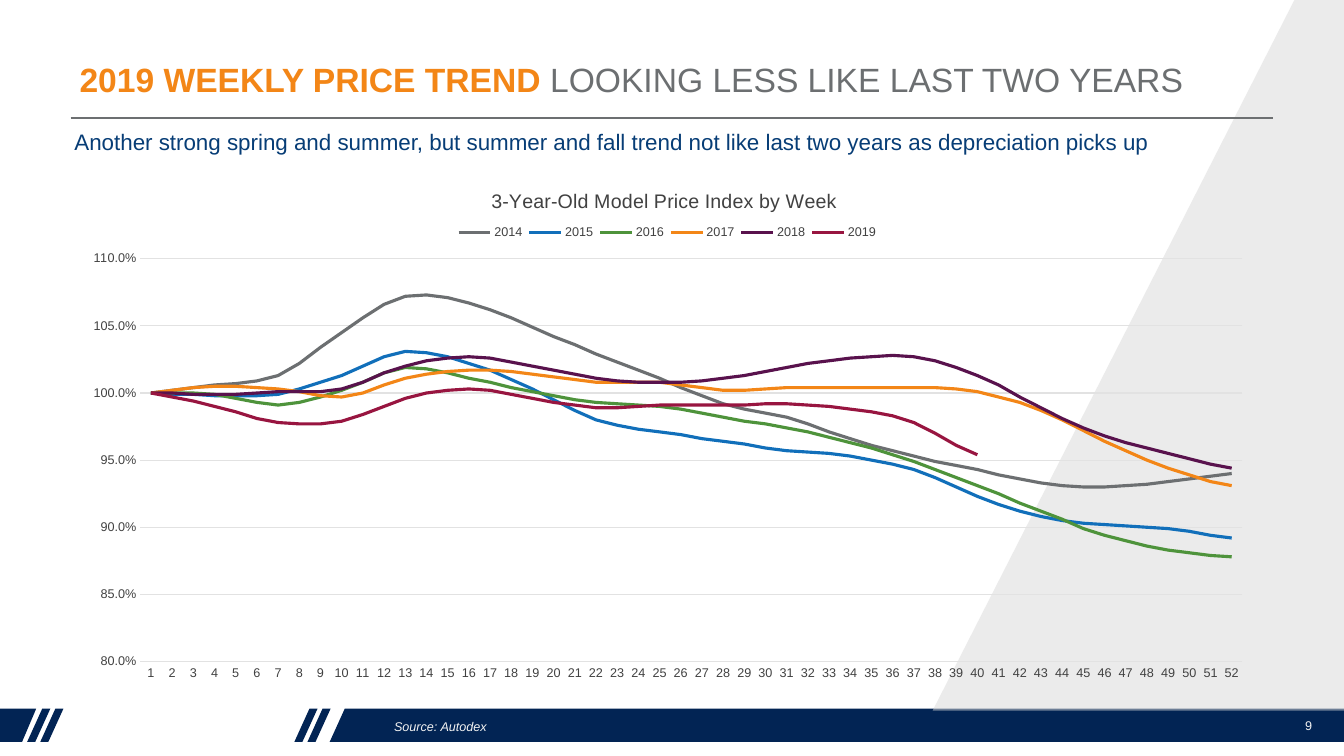
from lxml import etree
from pptx import Presentation
from pptx import util as u
from pptx.chart.data import CategoryChartData
from pptx.dml.color import RGBColor
from pptx.enum import chart as charts, shapes, text
from pptx.oxml.ns import qn

NAVY, ORANGE, GREY = "022454", "F38617", "6C6F71"
INK, GRID, PALE = "414141", "E2E2E2", "F2F2F2"
FOOTER_TOP, FOOTER_BOTTOM = 7.03, 7.36
SLANT = 0.15
WEEKS, STEP = 52, 3

# Index at every third week, in tenths of a percent
YEARS = {
    "2014": (GREY, [1000, 1006, 1013, 1045, 1072, 1067, 1049, 1029, 1011,
                    992, 982, 966, 953, 943, 933, 930, 934, 940]),
    "2015": ("116FBA", [1000, 998, 999, 1013, 1031, 1022, 1003, 980, 971,
                        964, 957, 953, 943, 923, 908, 902, 899, 892]),
    "2016": ("4E933B", [1000, 999, 991, 1002, 1019, 1011, 1001, 993, 990,
                        982, 974, 963, 949, 931, 912, 894, 883, 878]),
    "2017": (ORANGE, [1000, 1005, 1003, 997, 1011, 1017, 1014, 1008, 1008,
                      1002, 1004, 1004, 1004, 1001, 987, 964, 944, 931]),
    "2018": ("59124D", [1000, 999, 1001, 1003, 1020, 1027, 1020, 1011, 1008,
                        1011, 1019, 1026, 1027, 1013, 989, 968, 955, 944]),
    "2019": ("981540", [1000, 990, 978, 979, 996, 1003, 996, 989, 991,
                        991, 992, 988, 978, 954]),
}


def rgb(value):
    return RGBColor.from_string(value)


def weekly(knots):
    """Fill in the weeks between the knots with a Catmull-Rom curve."""
    values = []
    padded = [knots[0], *knots, knots[-1]]
    for before, start, end, after in zip(padded, padded[1:], padded[2:], padded[3:]):
        for week in range(STEP):
            t = week / STEP
            curve = start + t / 2 * (
                end - before
                + t * (2 * before - 5 * start + 4 * end - after)
                + t * t * (3 * (start - end) + after - before))
            values.append(round(curve) / 1000)
    values.append(knots[-1] / 1000)
    return values + [None] * (WEEKS - len(values))


class SlideBuilder:
    def __init__(self, slide, font="Arial"):
        self.slide, self.font = slide, font

    def style_font(self, font, color, size, **formats):
        for name, value in {"name": self.font, "size": u.Pt(size), **formats}.items():
            setattr(font, name, value)
        font.color.rgb = rgb(color)

    def style_line(self, line, color, width):
        line.color.rgb = rgb(color)
        line.width = u.Pt(width)

    def polygon(self, points, color, opacity=100):
        corners = [(u.Inches(x), u.Inches(y)) for x, y in points]
        builder = self.slide.shapes.build_freeform(*corners[0], scale=1.0)
        builder.add_line_segments(corners[1:], close=True)
        shape = builder.convert_to_shape()
        shape.shadow.inherit = False
        shape.fill.solid()
        shape.fill.fore_color.rgb = rgb(color)
        shape.line.fill.background()
        if opacity < 100:
            tint = shape.element.xpath("./p:spPr/a:solidFill/a:srgbClr")[0]
            etree.SubElement(tint, qn("a:alpha"), val=str(opacity * 1000))

    def rule(self, left, right, y, color, width):
        line = self.slide.shapes.add_connector(
            shapes.MSO_CONNECTOR.STRAIGHT,
            u.Inches(left), u.Inches(y), u.Inches(right), u.Inches(y))
        self.style_line(line.line, color, width)
        etree.SubElement(line.element.spPr, qn("a:effectLst"))

    def text(self, area, spans, size, anchor=text.MSO_ANCHOR.MIDDLE,
             align=text.PP_ALIGN.LEFT):
        """Add one paragraph made of (wording, colour, formats) spans."""
        box = self.slide.shapes.add_textbox(*map(u.Inches, area))
        frame = box.text_frame
        frame.word_wrap = True
        frame.vertical_anchor = anchor
        para = frame.paragraphs[0]
        para.alignment = align
        for wording, color, formats in spans:
            span = para.add_run()
            span.text = wording
            self.style_font(span.font, color, size, **formats)

    def line_chart(self, area, title, years):
        data = CategoryChartData(number_format="0.0%")
        data.categories = [str(week) for week in range(1, WEEKS + 1)]
        for year, (_, knots) in years.items():
            data.add_series(year, weekly(knots))
        chart = self.slide.shapes.add_chart(
            charts.XL_CHART_TYPE.LINE, *map(u.Inches, area), data).chart
        self.style_font(chart.font, INK, 10)

        chart.has_title = True
        chart.chart_title.include_in_layout = False
        heading = chart.chart_title.text_frame
        heading.text = title
        self.style_font(heading.paragraphs[0].runs[0].font, INK, 14, bold=False)

        chart.has_legend = True
        chart.legend.position = charts.XL_LEGEND_POSITION.TOP
        chart.legend.include_in_layout = False
        self.style_font(chart.legend.font, INK, 9)

        chart.plots[0].vary_by_categories = False
        for series, (color, _) in zip(chart.plots[0].series, years.values()):
            series.smooth = False
            series.marker.style = charts.XL_MARKER_STYLE.NONE
            self.style_line(series.format.line, color, 2.25)

        for axis in (chart.category_axis, chart.value_axis):
            axis.major_tick_mark = axis.minor_tick_mark = charts.XL_TICK_MARK.NONE
            self.style_font(axis.tick_labels.font, INK, 9)
        self.style_line(chart.category_axis.format.line, GRID, 0.75)
        scale = chart.value_axis
        for name, value in {"minimum_scale": 0.8, "maximum_scale": 1.1,
                            "major_unit": 0.05, "has_major_gridlines": True}.items():
            setattr(scale, name, value)
        scale.format.line.fill.background()
        self.style_line(scale.major_gridlines.format.line, GRID, 0.75)
        scale.tick_labels.number_format = "0.0%"
        scale.tick_labels.number_format_is_linked = False

        self.place(chart, "title", 1, xMode="edge", yMode="edge", x=0.35, y=0.04)
        self.place(chart, "legend", 1, xMode="edge", yMode="edge",
                   x=0.32, y=0.11, w=0.36, h=0.04)
        self.place(chart, "plotArea", 0, layoutTarget="inner",
                   xMode="edge", yMode="edge", x=0.06, y=0.18, w=0.92, h=0.76)

    def place(self, chart, part, index, **settings):
        """Set the manual layout of a chart part, in fractions of the chart."""
        owner = chart.element.xpath(f"c:chart/c:{part}")[0]
        for layout in owner.findall(qn("c:layout")):
            owner.remove(layout)
        layout = etree.Element(qn("c:layout"))
        owner.insert(index, layout)
        manual = etree.SubElement(layout, qn("c:manualLayout"))
        for name, value in settings.items():
            etree.SubElement(manual, qn(f"c:{name}"), val=str(value))


def main():
    deck = Presentation()
    deck.slide_width, deck.slide_height = u.Inches(13.33), u.Inches(7.5)
    page = SlideBuilder(deck.slides.add_slide(deck.slide_layouts[6]))

    for left in (2.92, 3.05, 0.27, 0.4):
        page.polygon([(left + 0.23, FOOTER_TOP), (left + 0.08, FOOTER_BOTTOM),
                      (left, FOOTER_BOTTOM), (left + SLANT, FOOTER_TOP)], NAVY)
    page.polygon([(-0.1, FOOTER_TOP), (0.36, FOOTER_TOP),
                  (0.22, FOOTER_BOTTOM), (-0.1, FOOTER_BOTTOM)], NAVY)
    page.polygon([(3.27 + SLANT, FOOTER_TOP), (13.48, FOOTER_TOP),
                  (13.48, FOOTER_BOTTOM), (3.27, FOOTER_BOTTOM)], NAVY)
    page.polygon([(13.51, -1.32), (13.54, 7.05), (9.25, 7.05)], "D9D9D9", opacity=50)
    page.rule(0.7, 12.63, 1.17, GREY, 1)

    page.text((3.81, 7.04, 7.91, 0.33),
              [("Source: Autodex", PALE, {"italic": True})], 9)
    page.text((12.74, 7, 0.48, 0.4), [("9", PALE, {})], 9, align=text.PP_ALIGN.CENTER)
    page.text((0.64, 1.22, 12.06, 0.45),
              [("Another strong spring and summer, but summer and fall trend "
                "not like last two years as depreciation picks up", "073D76", {})],
              16, anchor=text.MSO_ANCHOR.TOP)
    page.text((0.69, 0.37, 12.62, 0.83),
              [("2019 WEEKLY PRICE TREND ", ORANGE, {"bold": True}),
               ("LOOKING LESS LIKE LAST TWO YEARS", GREY, {"bold": False})], 24)
    page.line_chart((0.68, 1.62, 11.88, 5.26),
                    "3-Year-Old Model Price Index by Week", YEARS)
    deck.save("out.pptx")


if __name__ == "__main__":
    main()
